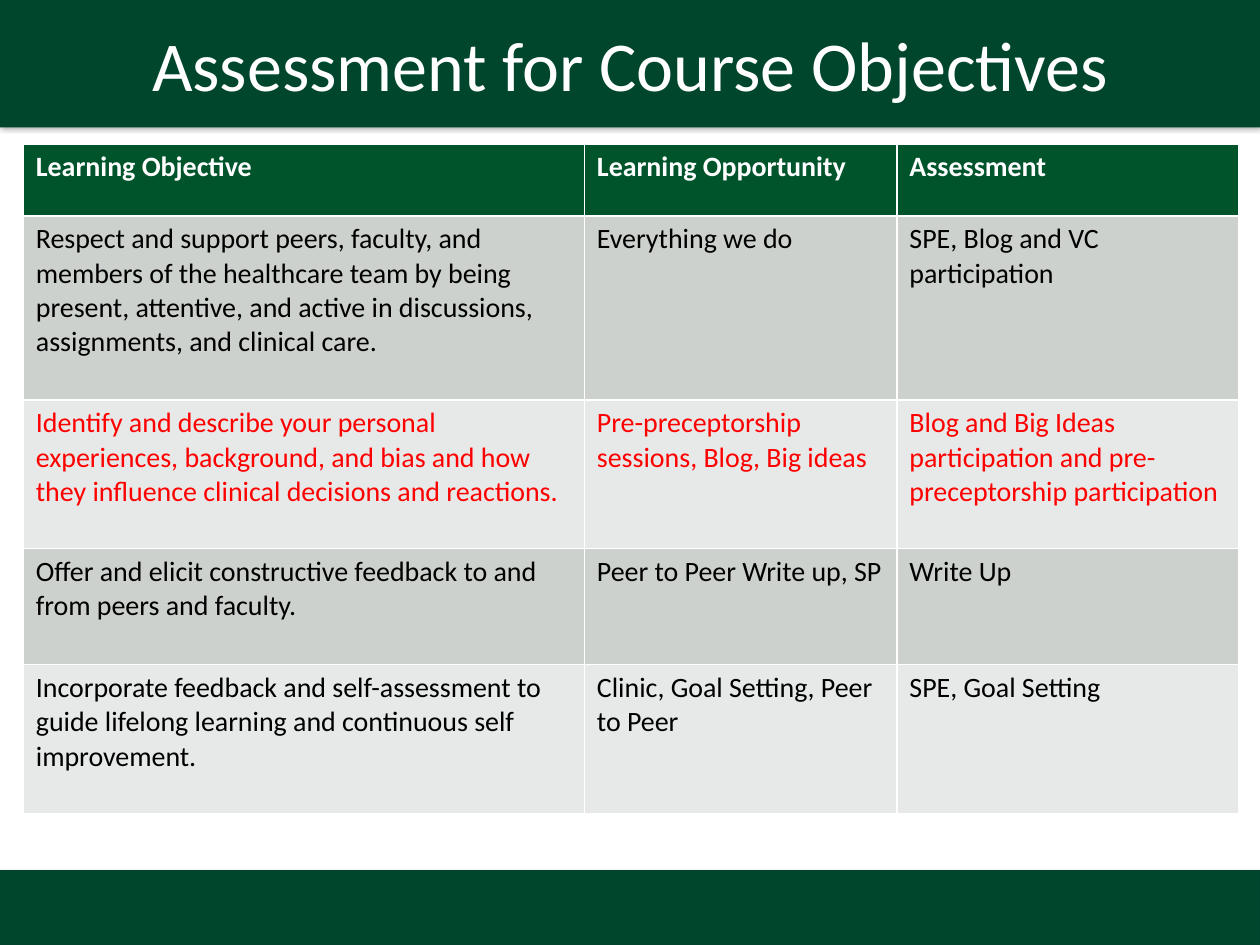
from pptx import Presentation
from pptx.dml.color import RGBColor
from pptx.enum.shapes import MSO_SHAPE
from pptx.enum.text import MSO_ANCHOR, PP_ALIGN
from pptx.oxml import parse_xml
from pptx.oxml.ns import nsdecls, qn
from pptx.util import Cm, Pt

TITLE = "Assessment for Course Objectives"
ROWS = [
    ("Learning Objective", "Learning Opportunity", "Assessment"),
    ("Respect and support peers, faculty, and members of the healthcare team by being "
     "present, attentive, and active in discussions, assignments, and clinical care.",
     "Everything we do", "SPE, Blog and VC participation"),
    ("Identify and describe your personal experiences, background, and bias and how "
     "they influence clinical decisions and reactions.",
     "Pre-preceptorship sessions, Blog, Big ideas",
     "Blog and Big Ideas participation and pre-preceptorship participation"),
    ("Offer and elicit constructive feedback to and from peers and faculty.",
     "Peer to Peer Write up, SP", "Write Up"),
    ("Incorporate feedback and self-assessment to guide lifelong learning and "
     "continuous self improvement.",
     "Clinic, Goal Setting, Peer to Peer", "SPE, Goal Setting"),
]
HIGHLIGHTED_ROW = 2
COLUMN_WIDTHS = [11.31, 6.3, 6.9]
ROW_HEIGHTS = [1.45, 3.71, 3, 2.34, 3]
BARS = [(0, 2.51), (17.55, 1.5)]
FONT = "Calibri"
COLORS = {
    "bar": "00462D", "bar_line": "00442D", "header": "00542C",
    "dark_band": "CCD1CD", "light_band": "E7E9E8",
    "white": "FFFFFF", "black": "000000", "highlight": "FF0000",
}


def color(name):
    return RGBColor.from_string(COLORS[name])


def fill_solid(target, name):
    target.fill.solid()
    target.fill.fore_color.rgb = color(name)


def format_text(paragraph, size, name, bold=False):
    for run in paragraph.runs:
        run.font.name = FONT
        run.font.size = Pt(size)
        run.font.bold = bold
        run.font.color.rgb = color(name)


def add_bar(slide, top, height):
    bar = slide.shapes.add_shape(
        MSO_SHAPE.RECTANGLE, 0, Cm(top), Cm(25.4), Cm(height))
    fill_solid(bar, "bar")
    bar.line.color.rgb = color("bar_line")
    bar.line.width = Pt(0.75)
    bar.shadow.inherit = False
    bar.element.spPr.find(qn("a:effectLst")).append(parse_xml(
        f'<a:outerShdw {nsdecls("a")} blurRad="{Pt(3.1)}" dist="{Pt(1.8)}" '
        'dir="5400000" rotWithShape="0"><a:srgbClr val="000000">'
        '<a:alpha val="35000"/></a:srgbClr></a:outerShdw>'))


def place_title(slide):
    title = slide.shapes.title
    title.element.getparent().append(title.element)
    title.left, title.top, title.width, title.height = 0, 0, Cm(25.4), Cm(2.57)
    fill_solid(title, "bar")
    title.text_frame.text = TITLE
    title.text_frame.vertical_anchor = MSO_ANCHOR.MIDDLE
    paragraph = title.text_frame.paragraphs[0]
    paragraph.alignment = PP_ALIGN.CENTER
    format_text(paragraph, 40, "white")


def row_style(index):
    if index == 0:
        return "header", "white"
    band = "dark_band" if index % 2 else "light_band"
    return band, "highlight" if index == HIGHLIGHTED_ROW else "black"


def add_objectives_table(slide):
    table = slide.shapes.add_table(
        len(ROWS), len(COLUMN_WIDTHS), Cm(0.47), Cm(2.9),
        Cm(sum(COLUMN_WIDTHS)), Cm(sum(ROW_HEIGHTS))).table
    for column, width in zip(table.columns, COLUMN_WIDTHS):
        column.width = Cm(width)
    for index, (row, height, texts) in enumerate(zip(table.rows, ROW_HEIGHTS, ROWS)):
        row.height = Cm(height)
        band, text_color = row_style(index)
        for cell, text in zip(row.cells, texts):
            fill_solid(cell, band)
            cell.text_frame.text = text
            format_text(cell.text_frame.paragraphs[0], 16, text_color, index == 0)


def main():
    presentation = Presentation()
    presentation.slide_width, presentation.slide_height = Cm(25.4), Cm(19.05)
    slide = presentation.slides.add_slide(presentation.slide_layouts[5])
    for top, height in BARS:
        add_bar(slide, top, height)
    place_title(slide)
    add_objectives_table(slide)
    presentation.save("out.pptx")


if __name__ == "__main__":
    main()
